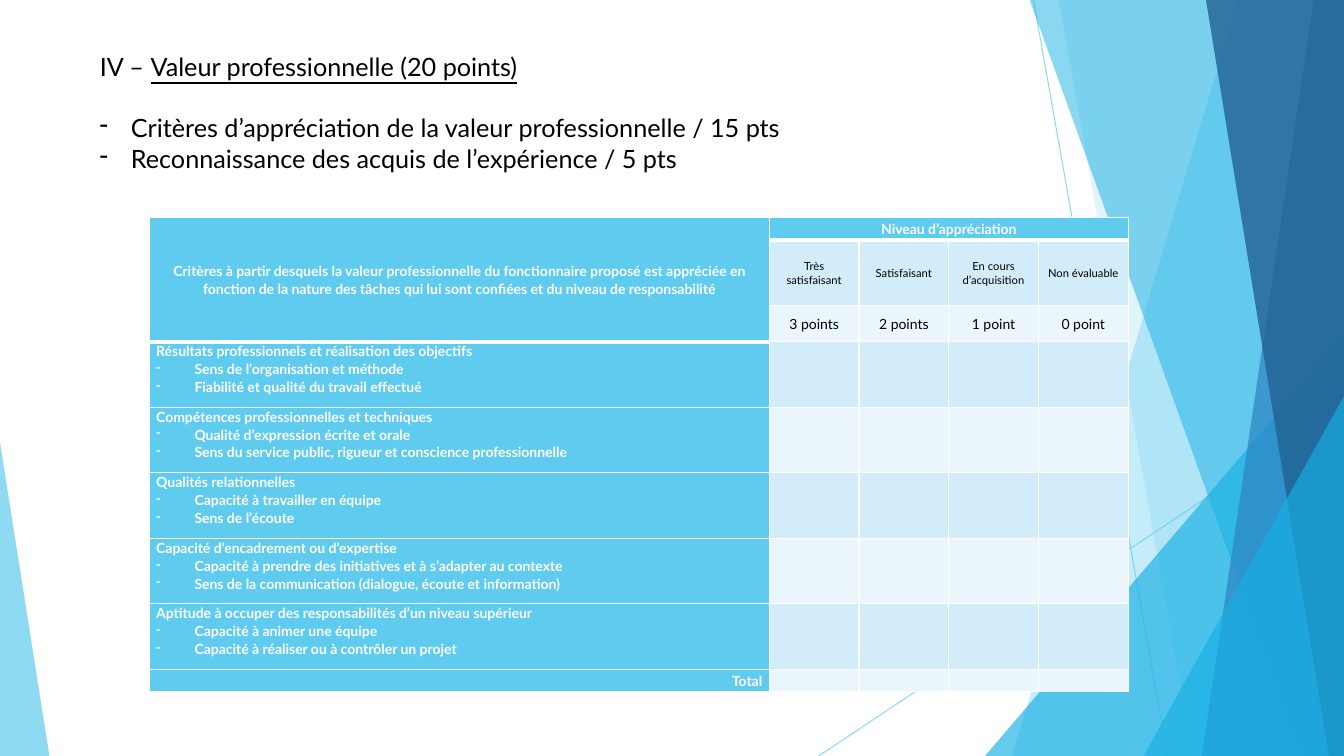
from lxml.etree import SubElement
from pptx import Presentation
from pptx.dml.color import RGBColor
from pptx.enum.shapes import MSO_CONNECTOR, MSO_SHAPE
from pptx.enum.text import MSO_ANCHOR, MSO_AUTO_SIZE, PP_ALIGN
from pptx.oxml import parse_xml
from pptx.oxml.ns import nsdecls, qn
from pptx.util import Pt

PX = 9144  # 100 px to the inch
WIDTH, HEIGHT = 1333, 750
FONT = "Lato"
BLACK, WHITE = "000000", "FFFFFF"
SKY, AZURE, BLUE, NAVY = "5FCBEF", "17B0E4", "2E83C3", "226292"
BANDS = ["D2ECF9", "EAF6FC"]

LEVELS = [("Très satisfaisant", "3 points"), ("Satisfaisant", "2 points"),
          ("En cours d’acquisition", "1 point"), ("Non évaluable", "0 point")]
CRITERIA_HEADING = ("Critères à partir desquels la valeur professionnelle du fonctionnaire "
                    "proposé est appréciée en fonction de la nature des tâches qui lui sont "
                    "confiées et du niveau de responsabilité")
CRITERIA = [
    ("Résultats professionnels et réalisation des objectifs",
     "Sens de l’organisation et méthode",
     "Fiabilité et qualité du travail effectué"),
    ("Compétences professionnelles et techniques",
     "Qualité d’expression écrite et orale",
     "Sens du service public, rigueur et conscience professionnelle"),
    ("Qualités relationnelles",
     "Capacité à travailler en équipe",
     "Sens de l’écoute"),
    ("Capacité d’encadrement ou d’expertise",
     "Capacité à prendre des initiatives et à s’adapter au contexte",
     "Sens de la communication (dialogue, écoute et information)"),
    ("Aptitude à occuper des responsabilités d’un niveau supérieur",
     "Capacité à animer une équipe",
     "Capacité à réaliser ou à contrôler un projet"),
]
HEADER_HEIGHTS = [22, 65, 36]
ROW_HEIGHTS = HEADER_HEIGHTS + [65] * len(CRITERIA) + [22]
COLUMN_WIDTHS = [615] + [89] * len(LEVELS)


def px(*lengths):
    return [length * PX for length in lengths]


def color(value):
    return RGBColor.from_string(value)


def set_opacity(shape, percent):
    for rgb in shape.element.spPr.iter(qn("a:srgbClr")):
        SubElement(rgb, qn("a:alpha")).set("val", str(percent * 1000))


# Background decoration
def add_ray(slide, start, end):
    ray = slide.shapes.add_connector(MSO_CONNECTOR.STRAIGHT, *px(*start, *end))
    ray.line.color.rgb = color(SKY)
    ray.line.width = Pt(0.75)
    set_opacity(ray, 70)
    SubElement(ray.element.spPr, qn("a:effectLst"))


def paint(shape, fill, opacity):
    shape.fill.solid()
    shape.fill.fore_color.rgb = color(fill)
    shape.line.fill.background()
    shape.shadow.inherit = False
    set_opacity(shape, opacity)


def add_facet(slide, top_x, bottom_x, fill, opacity):
    outline = slide.shapes.build_freeform(top_x, -1, scale=PX)
    outline.add_line_segments([(WIDTH, -1), (WIDTH, HEIGHT), (bottom_x, HEIGHT)], close=True)
    paint(outline.convert_to_shape(), fill, opacity)


def add_corner(slide, left, top, width, apex, fill, opacity):
    corner = slide.shapes.add_shape(MSO_SHAPE.ISOSCELES_TRIANGLE,
                                    *px(left, top, width, HEIGHT - top))
    corner.adjustments[0] = apex
    paint(corner, fill, opacity)


def add_background(slide):
    add_ray(slide, (1025, 0), (1158, HEIGHT))
    add_ray(slide, (WIDTH, 403), (812, HEIGHT))
    add_facet(slide, 1228, 1004, SKY, 36)
    add_facet(slide, 1050, 1183, SKY, 20)
    add_corner(slide, 977, 333, 356, 1, AZURE, 66)
    add_facet(slide, 1021, 1291, AZURE, 50)
    add_facet(slide, 1303, 1192, BLUE, 70)
    add_facet(slide, 1196, 1318, NAVY, 80)
    add_corner(slide, 1134, 393, 199, 1, AZURE, 66)
    add_corner(slide, 0, 439, 49, 0, SKY, 70)


# Text
def write(paragraph, text, size=10, ink=BLACK, bold=False, underline=False,
          align=PP_ALIGN.LEFT, spacing=None, bullet_indent=0):
    run = paragraph.add_run()
    run.text = text
    run.font.name = FONT
    run.font.size = Pt(size)
    run.font.color.rgb = color(ink)
    run.font.bold = bold
    run.font.underline = underline
    paragraph.alignment = align
    if spacing:
        paragraph.line_spacing = spacing
    if bullet_indent:
        properties = paragraph._p.get_or_add_pPr()
        properties.set("marL", str(bullet_indent * PX))
        properties.set("indent", str(-bullet_indent * PX))
        SubElement(properties, qn("a:buFontTx"))
        SubElement(properties, qn("a:buChar")).set("char", "-")


def write_lines(frame, lines):
    for number, (text, style) in enumerate(lines):
        paragraph = frame.add_paragraph() if number else frame.paragraphs[0]
        write(paragraph, text, **style)


def add_heading(slide):
    title = slide.shapes.title
    title.left, title.top, title.width, title.height = px(89, 46, 1177, 40)
    frame = title.text_frame
    frame.auto_size = MSO_AUTO_SIZE.NONE
    frame.vertical_anchor = MSO_ANCHOR.TOP
    write(frame.paragraphs[0], "IV – ", size=18)
    write(frame.paragraphs[0], "Valeur professionnelle (20 points)", size=18, underline=True)

    breakdown = slide.shapes.add_textbox(*px(89, 107, 1177, 70)).text_frame
    breakdown.word_wrap = True
    style = dict(size=18, bullet_indent=31)
    write_lines(breakdown, [
        ("Critères d’appréciation de la valeur professionnelle / 15 pts", style),
        ("Reconnaissance des acquis de l’expérience / 5 pts", style),
    ])


# Assessment grid
def format_cell(cell, fill, heavy_bottom):
    cell.margin_left = cell.margin_right = 7 * PX
    cell.margin_top = cell.margin_bottom = 0
    cell.fill.solid()
    cell.fill.fore_color.rgb = color(fill)
    for position, side in enumerate("LRTB"):
        width = Pt(3 if heavy_bottom and side == "B" else 1)
        cell._tc.tcPr.insert(position, parse_xml(
            f'<a:ln{side} {nsdecls("a")} w="{width}"><a:solidFill>'
            f'<a:srgbClr val="{WHITE}"/></a:solidFill></a:ln{side}>'))


def fill_cell(cell, *lines, anchor=MSO_ANCHOR.MIDDLE):
    cell.vertical_anchor = anchor
    write_lines(cell.text_frame, [(text, dict(spacing=1.07, **style)) for text, style in lines])


def add_assessment_grid(slide):
    grid = slide.shapes.add_table(
        len(ROW_HEIGHTS), len(COLUMN_WIDTHS),
        *px(148, 216, sum(COLUMN_WIDTHS), sum(ROW_HEIGHTS))).table
    grid.first_row = grid.horz_banding = False
    for row, height in zip(grid.rows, ROW_HEIGHTS):
        row.height = height * PX
    for column, width in zip(grid.columns, COLUMN_WIDTHS):
        column.width = width * PX

    header_rows = len(HEADER_HEIGHTS)
    for r in range(len(ROW_HEIGHTS)):
        for c in range(len(COLUMN_WIDTHS)):
            fill = SKY if r == 0 or c == 0 else BANDS[(r + 1) % 2]
            heavy_bottom = r == 0 or (c == 0 and r < header_rows)
            format_cell(grid.cell(r, c), fill, heavy_bottom)
    grid.cell(0, 0).merge(grid.cell(header_rows - 1, 0))
    grid.cell(0, 1).merge(grid.cell(0, len(LEVELS)))

    # Header band
    label = dict(ink=WHITE, bold=True)
    centred = dict(align=PP_ALIGN.CENTER)
    fill_cell(grid.cell(0, 0), (CRITERIA_HEADING, label | centred))
    fill_cell(grid.cell(0, 1), ("Niveau d’appréciation", label | centred))
    for c, (level, points) in enumerate(LEVELS, 1):
        fill_cell(grid.cell(1, c), (level, dict(size=8, **centred)))
        fill_cell(grid.cell(2, c), (points, centred))

    # Criteria and total
    for r, (criterion, *details) in enumerate(CRITERIA, header_rows):
        fill_cell(grid.cell(r, 0), (criterion, label),
                  *[(detail, dict(bullet_indent=38, **label)) for detail in details],
                  anchor=MSO_ANCHOR.TOP)
    fill_cell(grid.cell(len(ROW_HEIGHTS) - 1, 0), ("Total", dict(align=PP_ALIGN.RIGHT, **label)))

    # Small type in blank cells keeps the row heights
    for cell in grid.iter_cells():
        if not cell.text:
            SubElement(cell.text_frame.paragraphs[0]._p, qn("a:endParaRPr")).set("sz", "1000")


def main():
    presentation = Presentation()
    presentation.slide_width, presentation.slide_height = px(WIDTH, HEIGHT)
    slide = presentation.slides.add_slide(presentation.slide_layouts[5])
    add_background(slide)
    add_assessment_grid(slide)
    add_heading(slide)
    presentation.save("out.pptx")


if __name__ == "__main__":
    main()
